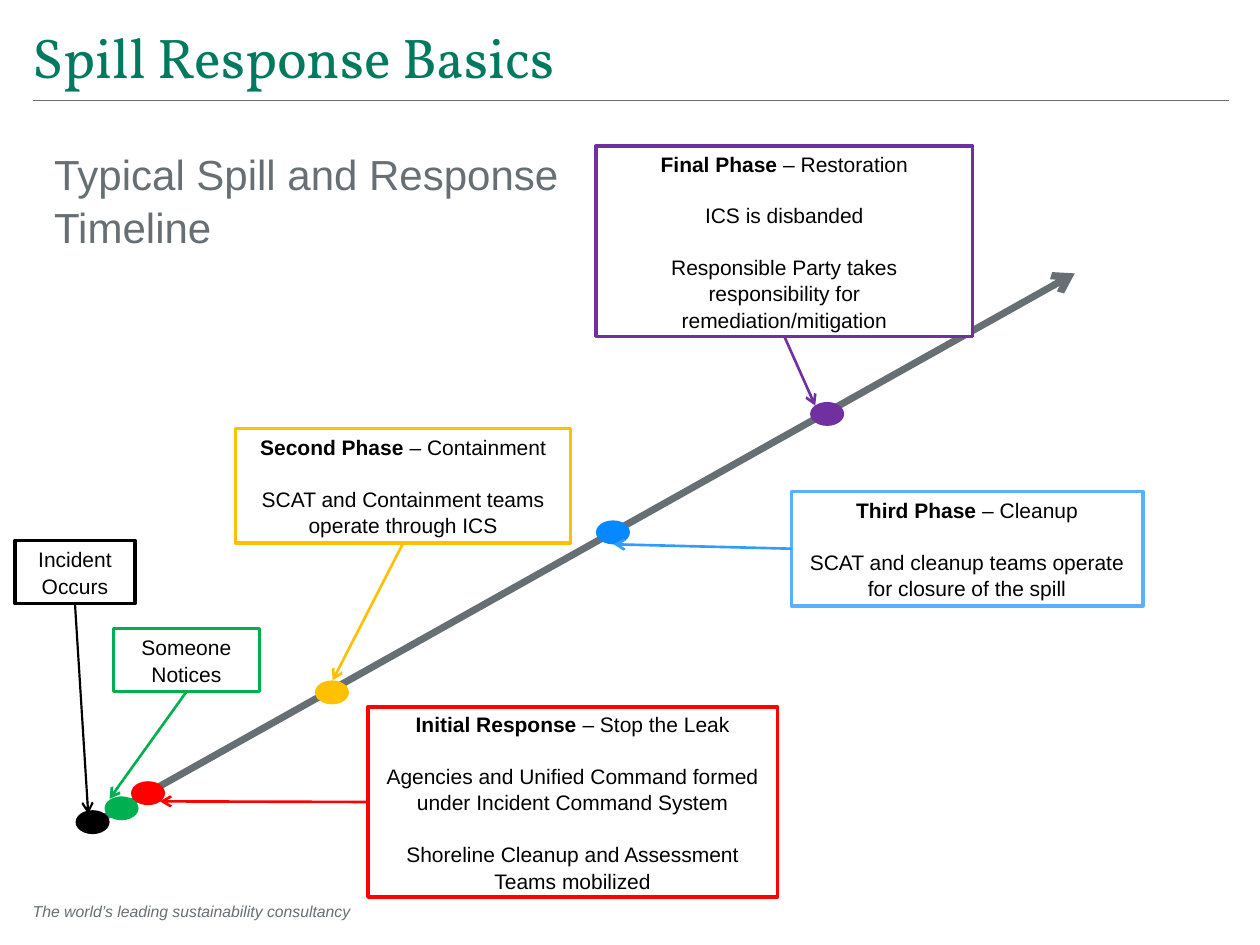
from lxml.etree import SubElement
from pptx import Presentation
from pptx.dml.color import RGBColor
from pptx.enum.shapes import MSO_CONNECTOR, MSO_SHAPE
from pptx.enum.text import MSO_ANCHOR, PP_ALIGN
from pptx.oxml.ns import qn
from pptx.util import Inches, Pt

COLORS = {
    "title": "007A5F", "gray": "666F74", "white": "FFFFFF", "black": "000000",
    "green": "00B050", "red": "FF0000", "gold": "FFC000", "purple": "7030A0",
    "blue": "0888FF", "sky": "5AB0FF", "azure": "319CFF",
}

DOTS = [
    (0.6, 6.43, "black"), (0.83, 6.32, "green"), (1.04, 6.2, "red"),
    (2.5, 5.4, "gold"), (4.73, 4.13, "blue"), (6.43, 3.19, "purple"),
]

# box, outline, arrow colour, arrow width, start side, arrow tip, bold lead, paragraphs
PHASES = [
    ((2.92, 5.61, 3.25, 1.51), "red", "red", 1.5, "left", (1.27, 6.36), "Initial Response",
     [" – Stop the Leak",
      "Agencies and Unified Command formed under Incident Command System",
      "Shoreline Cleanup and Assessment Teams mobilized"]),
    ((0.9, 4.99, 1.16, 0.5), "green", "green", 1.5, "bottom", (0.87, 6.34), "",
     ["Someone Notices"]),
    ((1.87, 3.4, 2.66, 0.91), "gold", "gold", 1.5, "bottom", (2.64, 5.4), "Second Phase ",
     ["– Containment", "SCAT and Containment teams operate through ICS"]),
    ((6.28, 3.9, 2.79, 0.91), "sky", "azure", 1.5, "left", (4.87, 4.32), "Third Phase ",
     ["– Cleanup", "SCAT and cleanup teams operate for closure of the spill"]),
    ((0.12, 4.29, 0.95, 0.5), "black", "black", 1.25, "bottom", (0.7, 6.46), "",
     ["Incident Occurs"]),
    ((4.73, 1.16, 2.99, 1.51), "purple", "purple", 1.5, "bottom", (6.47, 3.22), "Final Phase ",
     ["– Restoration", "ICS is disbanded",
      "Responsible Party takes responsibility for remediation/mitigation"]),
]


def rgb(name):
    return RGBColor.from_string(COLORS[name])


def add_run(para, text, size, color, font="Arial", bold=False, italic=False):
    run = para.add_run()
    run.text = text
    run.font.name = font
    run.font.size = Pt(size)
    run.font.bold = bold
    run.font.italic = italic
    run.font.color.rgb = rgb(color)


def set_frame(frame, anchor=MSO_ANCHOR.TOP, side=0):
    frame.word_wrap = True
    frame.vertical_anchor = anchor
    frame.margin_left = frame.margin_right = Inches(side)
    frame.margin_bottom = Inches(0.05)


def add_line(slide, start, end, color, width, arrow=True):
    points = [Inches(v) for v in (*start, *end)]
    line = slide.shapes.add_connector(MSO_CONNECTOR.STRAIGHT, *points)
    line.line.color.rgb = rgb(color)
    line.line.width = Pt(width)
    props = line._element.spPr
    if arrow:
        SubElement(props.find(qn("a:ln")), qn("a:tailEnd"), type="arrow")
    SubElement(props, qn("a:effectLst"))


def add_shape(slide, kind, box, fill):
    shape = slide.shapes.add_shape(kind, *[Inches(v) for v in box])
    shape.shadow.inherit = False
    shape.fill.solid()
    shape.fill.fore_color.rgb = rgb(fill)
    return shape


def add_title(slide, box):
    title = slide.shapes.title
    title.left, title.top, title.width, title.height = [Inches(v) for v in box]
    frame = title.text_frame
    set_frame(frame)
    frame.margin_top = 0
    para = frame.paragraphs[0]
    para.alignment = PP_ALIGN.LEFT
    add_run(para, "Spill Response Basics", 32, "title", "Vollkorn")
    add_line(slide, (box[0], 0.8), (box[0] + box[2], 0.8), "gray", 0.5, False)


def add_intro(slide, box):
    frame = slide.shapes.add_textbox(*[Inches(v) for v in box]).text_frame
    set_frame(frame)
    frame.margin_top = 0
    para = frame.paragraphs[0]
    para.line_spacing = 1.05
    add_run(para, "Typical Spill and Response", 24, "gray")
    para.add_line_break()
    add_run(para, "Timeline", 24, "gray")


def add_footer(slide, box):
    frame = slide.shapes.add_textbox(*[Inches(v) for v in box]).text_frame
    set_frame(frame)
    add_run(frame.paragraphs[0], "The world’s leading sustainability consultancy",
            9, "gray", italic=True)


def add_axis(slide, box):
    left, top, width, height = box
    add_line(slide, (left, top + height), (left + width, top), "gray", 4)
    for x, y, color in DOTS:
        dot = add_shape(slide, MSO_SHAPE.OVAL, (x, y, 0.27, 0.19), color)
        dot.line.fill.background()


def add_phase(slide, box, edge, lead, texts):
    shape = add_shape(slide, MSO_SHAPE.RECTANGLE, box, "white")
    shape.line.color.rgb = rgb(edge)
    shape.line.width = Pt(2)
    frame = shape.text_frame
    set_frame(frame, MSO_ANCHOR.MIDDLE, 0.1)
    for i, text in enumerate(texts):
        para = frame.add_paragraph() if i else frame.paragraphs[0]
        para.alignment = PP_ALIGN.CENTER
        para.line_spacing = 1.05
        if i:
            para.space_before = Pt(14.4)
        elif lead:
            add_run(para, lead, 12, "black", bold=True)
        add_run(para, text, 12, "black")


def add_arrow(slide, box, side, tip, color, width):
    left, top, wide, high = box
    start = (left, top + high / 2) if side == "left" else (left + wide / 2, top + high)
    add_line(slide, start, tip, color, width)


def main():
    deck = Presentation()
    deck.slide_width, deck.slide_height = Inches(10), Inches(7.5)
    slide = deck.slides.add_slide(deck.slide_layouts[5])
    add_title(slide, (0.26, 0.18, 9.49, 0.98))
    add_footer(slide, (0.26, 7.11, 4.91, 0.25))
    add_intro(slide, (0.43, 1.16, 4.05, 1.51))
    add_axis(slide, (0.75, 2.17, 7.78, 4.36))
    for box, edge, _, _, _, _, lead, texts in PHASES:
        add_phase(slide, box, edge, lead, texts)
    for box, _, color, width, side, tip, _, _ in PHASES:
        add_arrow(slide, box, side, tip, color, width)
    deck.save("out.pptx")


if __name__ == "__main__":
    main()
